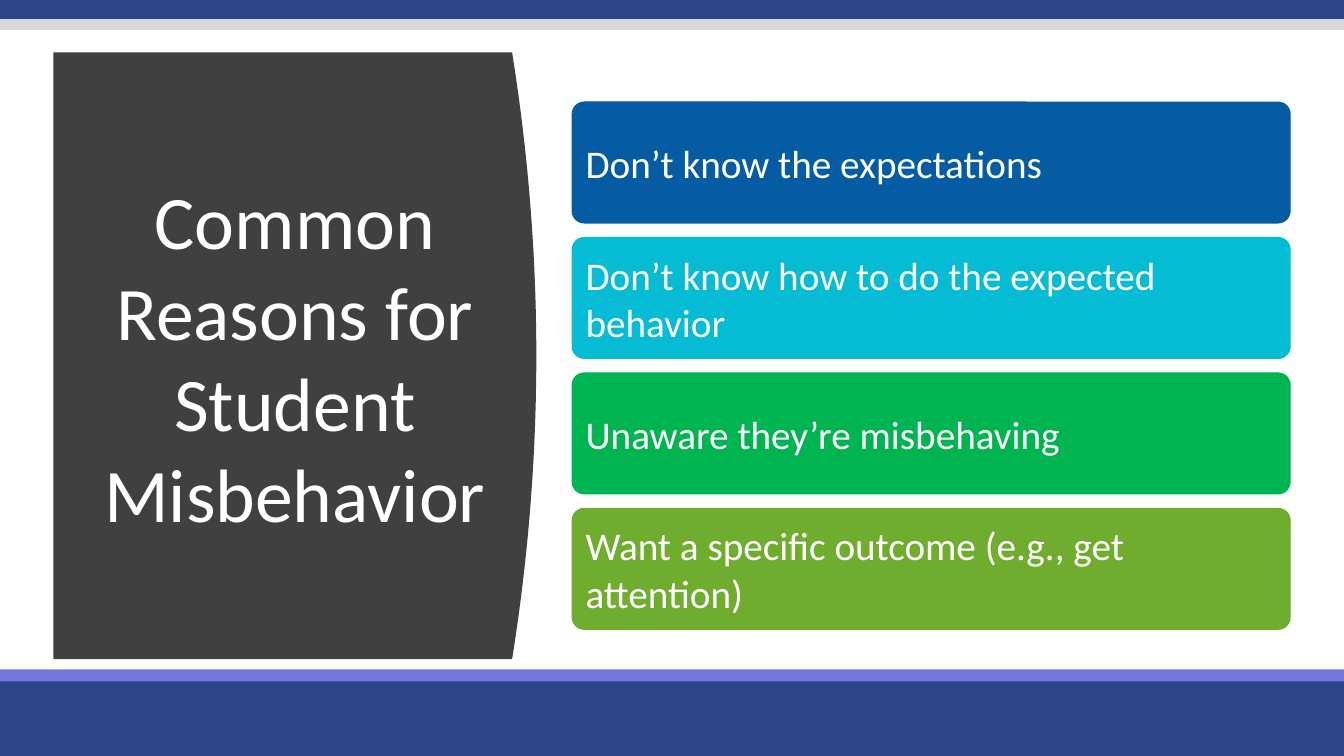
import pptx
import pptx.dml.color
import pptx.enum.shapes
import pptx.enum.text
import pptx.util

Pt = pptx.util.Pt
SHAPES = pptx.enum.shapes.MSO_SHAPE
ALIGN = pptx.enum.text.PP_ALIGN

FONT = "Calibri"
SLIDE_WIDTH, SLIDE_HEIGHT = 960, 540
COLORS = {
    "navy": "2E4488",
    "violet": "7476DA",
    "silver": "D9D9D9",
    "charcoal": "404040",
    "blue": "055CA3",
    "cyan": "06BBD4",
    "green": "00B451",
    "olive": "70AC2E",
    "white": "FFFFFF",
}
BANDS = [
    (482.4, 57.6, "navy"),
    (478.1, 8.6, "violet"),
    (-2.2, 15.8, "navy"),
    (13.7, 7.9, "silver"),
]
REASONS = [
    ("Don’t know the expectations", "blue"),
    ("Don’t know how to do the expected behavior", "cyan"),
    ("Unaware they’re misbehaving", "green"),
    ("Want a specific outcome (e.g., get attention)", "olive"),
]


def rgb(color):
    return pptx.dml.color.RGBColor.from_string(COLORS[color])


def paint(shape, color):
    shape.shadow.inherit = False
    shape.fill.solid()
    shape.fill.fore_color.rgb = rgb(color)
    shape.line.fill.background()


def write(shape, text, size, align, vertical_inset):
    frame = shape.text_frame
    frame.text = text
    frame.word_wrap = True
    frame.vertical_anchor = pptx.enum.text.MSO_ANCHOR.MIDDLE
    frame.margin_left = frame.margin_right = Pt(7.2)
    frame.margin_top = frame.margin_bottom = Pt(vertical_inset)
    paragraph = frame.paragraphs[0]
    paragraph.alignment = align
    font = paragraph.runs[0].font
    font.name = FONT
    font.size = Pt(size)
    font.color.rgb = rgb("white")


def add_band(slide, top, height, color):
    band = slide.shapes.add_shape(
        SHAPES.RECTANGLE, 0, Pt(top), Pt(SLIDE_WIDTH), Pt(height))
    paint(band, color)


def add_title_panel(slide, text):
    left, top, shoulder, bottom = 38.2, 37.4, 365.8, 470.9
    bulge, steps = 17.3, 40
    middle, half = (top + bottom) / 2, (bottom - top) / 2
    curve = []
    for step in range(steps + 1):
        offset = 2 * step / steps - 1
        curve.append((Pt(shoulder + bulge * (1 - offset ** 2)),
                      Pt(middle + half * offset)))
    builder = slide.shapes.build_freeform(Pt(left), Pt(top))
    builder.add_line_segments(curve + [(Pt(left), Pt(bottom))], close=True)
    panel = builder.convert_to_shape()
    paint(panel, "charcoal")
    write(panel, text, 54, ALIGN.CENTER, 3.6)


def add_reason_card(slide, top, text, color):
    card = slide.shapes.add_shape(
        SHAPES.ROUNDED_RECTANGLE, Pt(408.7), Pt(top), Pt(512.9), Pt(86.4))
    card.adjustments[0] = 0.1
    paint(card, color)
    card.line.color.rgb = rgb(color)
    card.line.width = Pt(0.75)
    write(card, text, 28, ALIGN.LEFT, 7.2)


def main():
    deck = pptx.Presentation()
    deck.slide_width = Pt(SLIDE_WIDTH)
    deck.slide_height = Pt(SLIDE_HEIGHT)
    slide = deck.slides.add_slide(deck.slide_layouts[6])
    for top, height, color in BANDS:
        add_band(slide, top, height, color)
    add_title_panel(slide, "Common Reasons for Student Misbehavior")
    for index, (reason, color) in enumerate(REASONS):
        add_reason_card(slide, 72.9 + index * 96.75, reason, color)
    deck.save("out.pptx")


if __name__ == "__main__":
    main()
